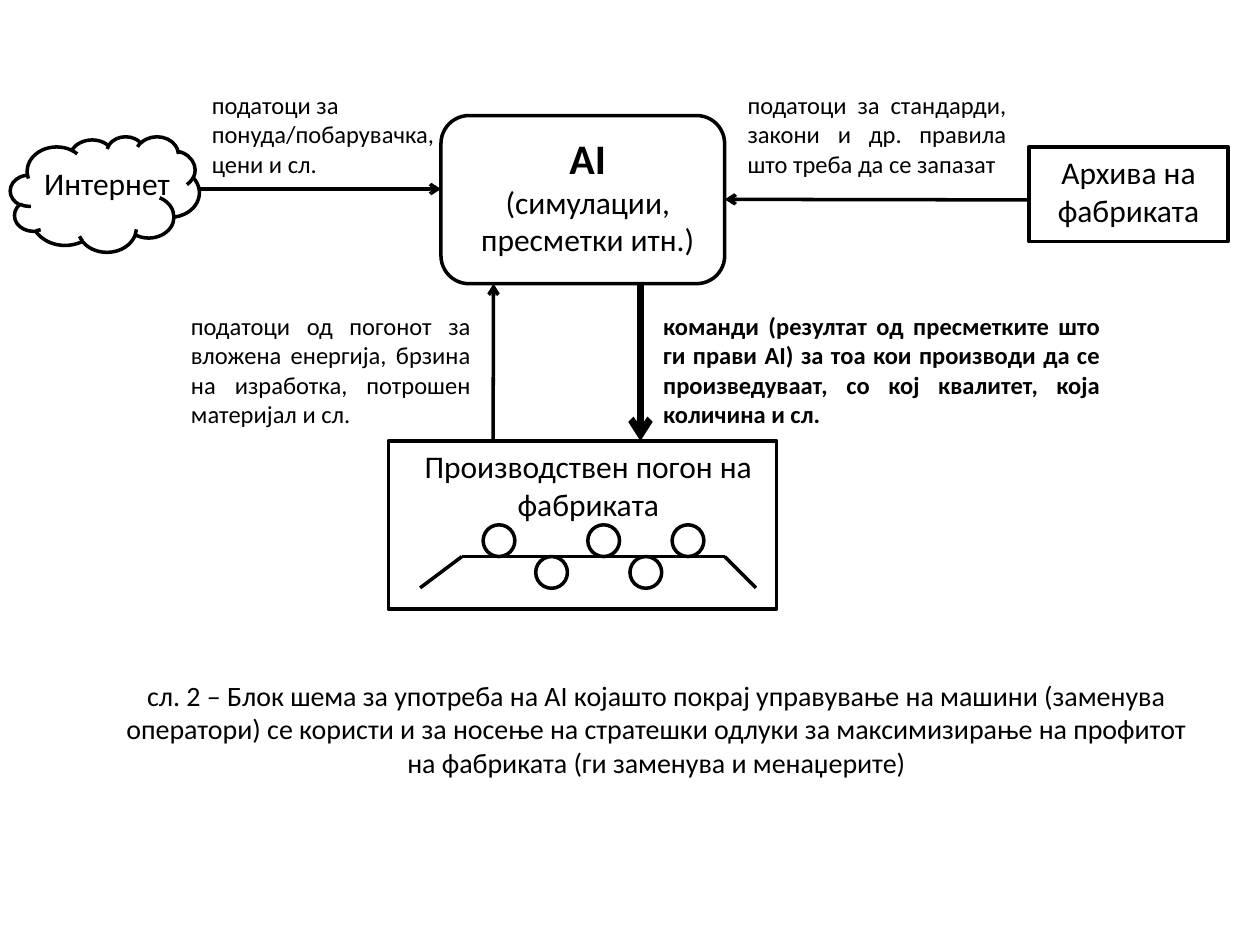
from dataclasses import dataclass

from lxml import etree
from pptx import Presentation
from pptx.dml.color import RGBColor
from pptx.enum.shapes import MSO_CONNECTOR, MSO_SHAPE
from pptx.enum.text import MSO_AUTO_SIZE, PP_ALIGN
from pptx.oxml.ns import qn
from pptx.util import Cm, Pt

STRAIGHT = MSO_CONNECTOR.STRAIGHT
CLOUD = MSO_SHAPE.CLOUD
ROUNDED = MSO_SHAPE.ROUNDED_RECTANGLE
RECTANGLE = MSO_SHAPE.RECTANGLE
OVAL = MSO_SHAPE.OVAL
LEFT, CENTER, JUSTIFY = PP_ALIGN.LEFT, PP_ALIGN.CENTER, PP_ALIGN.JUSTIFY
FIT_TEXT = MSO_AUTO_SIZE.SHAPE_TO_FIT_TEXT


@dataclass(frozen=True)
class Theme:
    font: str = "Calibri"
    ink: RGBColor = RGBColor(0, 0, 0)
    heading: int = 24
    block: int = 18
    caption: int = 16
    note: int = 14
    thin: int = 2
    thick: int = 4


THEME = Theme()


def add_outline(slide, kind, left, top, width, height):
    outline = slide.shapes.add_shape(kind, Cm(left), Cm(top), Cm(width), Cm(height))
    outline.shadow.inherit = False
    outline.fill.background()
    outline.line.color.rgb = THEME.ink
    outline.line.width = Pt(THEME.thin)


def add_label(slide, box, lines, align=CENTER):
    label = slide.shapes.add_textbox(*(Cm(length) for length in box))
    frame = label.text_frame
    frame.word_wrap = True
    frame.auto_size = FIT_TEXT
    frame.text = "\n".join(text for text, _, _ in lines)
    for paragraph, (_, size, bold) in zip(frame.paragraphs, lines):
        paragraph.alignment = align
        font = paragraph.runs[0].font
        font.name = THEME.font
        font.size = Pt(size)
        font.bold = bold
        font.color.rgb = THEME.ink


def add_line(slide, start, end, weight=THEME.thin):
    line = slide.shapes.add_connector(
        STRAIGHT, *(Cm(length) for length in (*start, *end))
    )
    line.line.color.rgb = THEME.ink
    line.line.width = Pt(weight)
    etree.SubElement(line._element.spPr, qn("a:effectLst"))
    return line


def add_arrow(slide, start, end, weight=THEME.thin):
    arrow = add_line(slide, start, end, weight)
    etree.SubElement(arrow.line._get_or_add_ln(), qn("a:tailEnd"), type="arrow")


def add_conveyor(slide):
    belt_top, roller = 11.22, 0.64
    belt = [(8.47, 11.85), (9.31, belt_top), (14.61, belt_top), (15.24, 11.85)]
    for start, end in zip(belt, belt[1:]):
        add_line(slide, start, end)
    for index, left in enumerate((9.74, 10.8, 11.85, 12.7, 13.55)):
        top = belt_top if index % 2 else belt_top - roller
        add_outline(slide, OVAL, left, top, roller, roller)


def add_blocks(slide):
    add_outline(slide, CLOUD, 0.21, 2.75, 3.81, 2.33)
    add_label(slide, (0.64, 3.18, 3.6, 1.03), [("Интернет", THEME.block, False)], LEFT)

    add_outline(slide, ROUNDED, 8.89, 2.33, 5.72, 3.39)
    add_label(slide, (9.31, 2.54, 5.08, 2.82), [
        ("AI", THEME.heading, True),
        ("(симулации, пресметки итн.)", THEME.block, False),
    ])

    add_outline(slide, RECTANGLE, 7.83, 8.89, 7.83, 3.39)
    add_conveyor(slide)
    add_label(slide, (8.26, 8.89, 7.2, 1.8),
              [("Производствен погон на фабриката", THEME.block, False)])

    add_outline(slide, RECTANGLE, 20.74, 2.96, 4.02, 1.91)
    add_label(slide, (20.74, 2.96, 4.02, 1.8),
              [("Архива на фабриката", THEME.block, False)])


def add_flows(slide):
    add_arrow(slide, (4.02, 3.81), (8.89, 3.81))
    add_arrow(slide, (20.74, 4.03), (14.61, 4.02))
    add_arrow(slide, (9.94, 8.89), (9.95, 5.72))
    add_arrow(slide, (12.91, 5.72), (12.91, 8.89), THEME.thick)

    notes = [
        ((4.02, 1.69, 5.08, 2.05), LEFT, False,
         "податоци за понуда/побарувачка, цени и сл."),
        ((14.82, 1.69, 5.72, 2.05), JUSTIFY, False,
         "податоци за стандарди, закони и др. правила што треба да се запазат"),
        ((3.6, 6.14, 6.14, 2.65), JUSTIFY, False,
         "податоци од погонот за вложена енергија, брзина на изработка, "
         "потрошен материјал и сл."),
        ((13.12, 6.14, 9.31, 2.65), JUSTIFY, True,
         "команди (резултат од пресметките што ги прави AI) за тоа кои "
         "производи да се произведуваат, со кој квалитет, која количина и сл."),
    ]
    for box, align, bold, text in notes:
        add_label(slide, box, [(text, THEME.note, bold)], align)


def main():
    presentation = Presentation()
    presentation.slide_width = Cm(25.4)
    presentation.slide_height = Cm(19.05)
    slide = presentation.slides.add_slide(presentation.slide_layouts[6])

    add_blocks(slide)
    add_flows(slide)
    caption = (
        "сл. 2 – Блок шема за употреба на AI којашто покрај управување на машини "
        "(заменува оператори) се користи и за носење на стратешки одлуки за "
        "максимизирање на профитот на фабриката (ги заменува и менаџерите)"
    )
    add_label(slide, (2.12, 13.55, 22.23, 2.31), [(caption, THEME.caption, False)])

    presentation.save("out.pptx")


if __name__ == "__main__":
    main()
